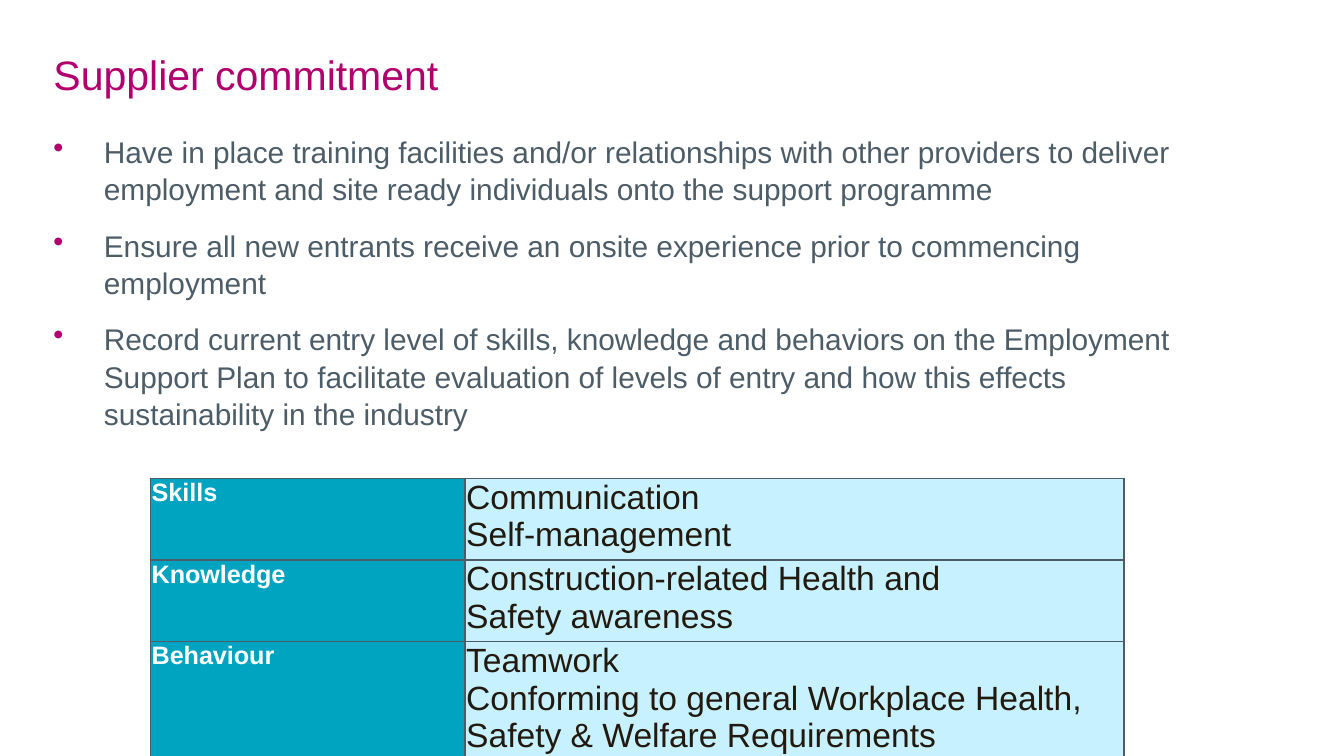
from pptx import Presentation
from pptx.dml.color import RGBColor
from pptx.enum.text import MSO_ANCHOR
from pptx.oxml import parse_xml
from pptx.oxml.ns import nsdecls
from pptx.util import Pt

MAGENTA = RGBColor(0xB1, 0x00, 0x6E)
SLATE = RGBColor(0x4D, 0x5D, 0x68)
TEAL = RGBColor(0x00, 0xA4, 0xC0)
PALE_BLUE = RGBColor(0xC8, 0xF1, 0xFF)
INK = RGBColor(0x22, 0x1A, 0x0F)
WHITE = RGBColor(0xFF, 0xFF, 0xFF)

TITLE_FONT = dict(size=Pt(22), color=MAGENTA)
BULLET_FONT = dict(size=Pt(16), color=SLATE)
LABEL_FONT = dict(size=Pt(13.5), color=WHITE, bold=True)
ENTRY_FONT = dict(size=Pt(18), color=INK, bold=False)

BULLETS = [
    "Have in place training facilities and/or relationships with other providers "
    "to deliver employment and site ready individuals onto the support programme",
    "Ensure all new entrants receive an onsite experience prior to commencing "
    "employment",
    "Record current entry level of skills, knowledge and behaviors on the "
    "Employment Support Plan to facilitate evaluation of levels of entry and how "
    "this effects sustainability in the industry",
]
ENTRIES = {
    "Skills": ["Communication", "Self-management"],
    "Knowledge": ["Construction-related Health and", "Safety awareness"],
    "Behaviour": ["Teamwork", "Conforming to general Workplace Health,",
                  "Safety & Welfare Requirements"],
}


def write(tf, lines, font, hang=0, bullet=None, gap=0, spacing=None):
    """Fill a text frame, one paragraph a line, with optional hanging bullets."""
    for i, line in enumerate(lines):
        p = tf.add_paragraph() if i else tf.paragraphs[0]
        pPr = p._p.get_or_add_pPr()
        if hang:
            pPr.set("marL", str(Pt(hang)))
            pPr.set("indent", str(-Pt(hang)))
        if bullet:
            pPr.append(parse_xml(f'<a:buClr {nsdecls("a")}><a:srgbClr val="{MAGENTA}"/></a:buClr>'))
            pPr.append(parse_xml(f'<a:buChar {nsdecls("a")} char="{bullet}"/>'))
        if gap and i:
            p.space_before = Pt(gap)
        p.line_spacing = spacing
        r = p.add_run()
        r.text = line
        r.font.name = "Arial"
        for name, value in font.items():
            if name == "color":
                r.font.color.rgb = value
            else:
                setattr(r.font, name, value)


def add_text_frame(s, x, y, w, h, top=3.6):
    tf = s.shapes.add_textbox(Pt(x), Pt(y), Pt(w), Pt(h)).text_frame
    tf.word_wrap = True
    tf.margin_top = Pt(top)
    return tf


def add_title(s, x, y, w, h):
    tf = add_text_frame(s, x, y, w, h, top=5.4)
    write(tf, ["Supplier commitment"], TITLE_FONT, spacing=0.9)


def add_bullets(s, x, y, w, h):
    tf = add_text_frame(s, x, y, w, h)
    write(tf, BULLETS, BULLET_FONT, hang=27, bullet="•", gap=10, spacing=1.05)


def add_borders(cell):
    """Line all four sides; borders must come before the fill in tcPr."""
    tcPr = cell._tc.get_or_add_tcPr()
    for i, side in enumerate(("lnL", "lnR", "lnT", "lnB")):
        tcPr.insert(i, parse_xml(
            f'<a:{side} {nsdecls("a")} w="{Pt(1)}"><a:solidFill>'
            f'<a:srgbClr val="{SLATE}"/></a:solidFill></a:{side}>'))


def add_entry_table(s, x, y, w, label_w, line_h):
    heights = [Pt(line_h * len(lines)) for lines in ENTRIES.values()]
    table = s.shapes.add_table(len(ENTRIES), 2, Pt(x), Pt(y), Pt(w), sum(heights)).table
    table.first_row = table.horz_banding = False
    table.columns[0].width = Pt(label_w)
    table.columns[1].width = Pt(w - label_w)
    for row, height, (label, lines) in zip(table.rows, heights, ENTRIES.items()):
        row.height = height
        columns = (([label], LABEL_FONT, 0, TEAL), (lines, ENTRY_FONT, 27, PALE_BLUE))
        for cell, (texts, font, hang, fill) in zip(row.cells, columns):
            cell.margin_left = cell.margin_right = Pt(0.7)
            cell.margin_top = cell.margin_bottom = Pt(0.25)
            cell.vertical_anchor = MSO_ANCHOR.TOP
            cell.fill.solid()
            cell.fill.fore_color.rgb = fill
            add_borders(cell)
            write(cell.text_frame, texts, font, hang)


def main():
    prs = Presentation()
    prs.slide_width, prs.slide_height = Pt(720), Pt(405)
    s = prs.slides.add_slide(prs.slide_layouts[6])
    add_bullets(s, 21.6, 67, 638.6, 277)
    add_title(s, 21.6, 23.8, 667.4, 29.5)
    add_entry_table(s, 80.6, 256.3, 521.5, label_w=168.5, line_h=20.8)
    prs.save("out.pptx")


if __name__ == "__main__":
    main()
